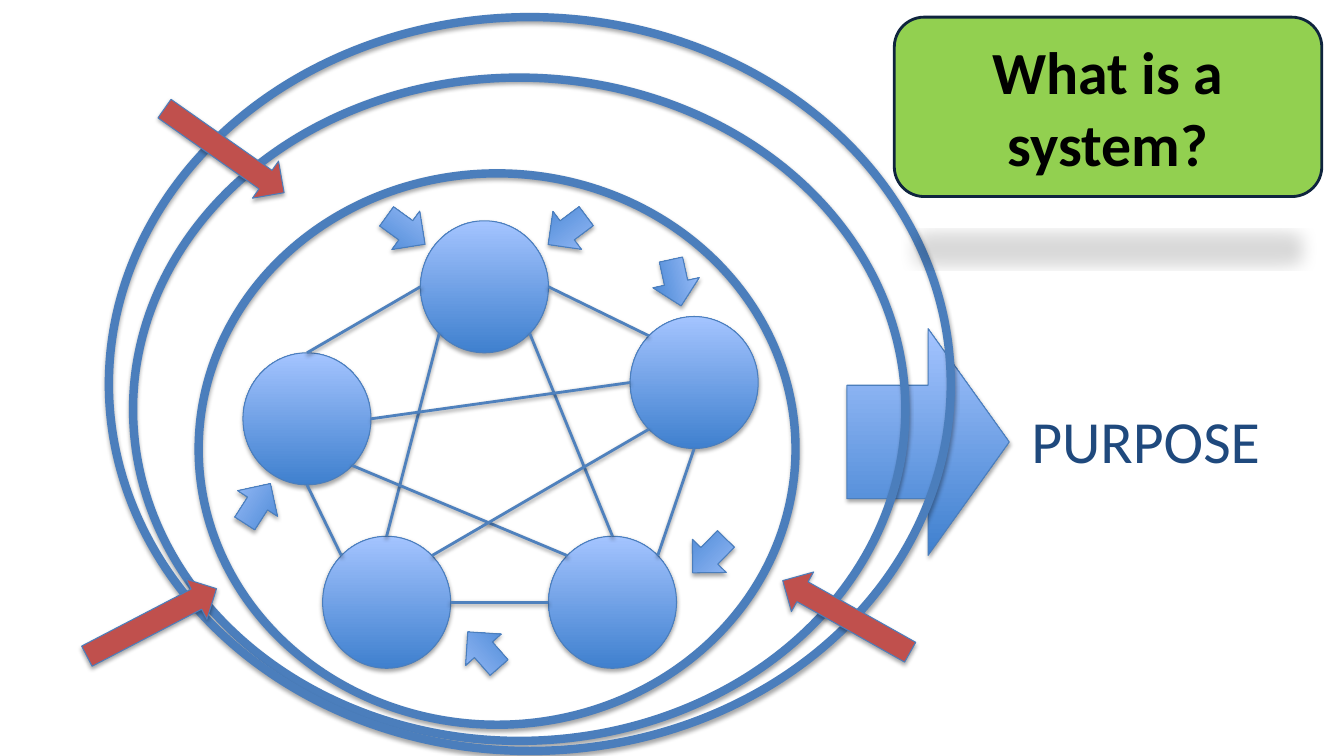
import math

import pptx
import pptx.dml.color
import pptx.enum.shapes
import pptx.enum.text
import pptx.oxml
import pptx.oxml.ns
import pptx.util

PX = 9144  # 100 px to the inch
KIND = pptx.enum.shapes.MSO_SHAPE

THEME = {
    "blend": ("3F80CE", "A4C4FF"),
    "outline": "4B7EBC",
    "link": "4F81BD",
    "force": "C0504D",
    "title_fill": "92D050",
    "title_line": "0F243E",
    "title_text": "000000",
    "purpose_text": "1F497D",
    "font": "Calibri",
    "size": 42.7,
}
SHAPE_SHADOW = {"blurRad": 39370, "dist": 22860, "alpha": 35000}
LINK_SHADOW = {"blurRad": 39370, "dist": 20320, "alpha": 38000}
TITLE_SHADOW = {"blurRad": 152400, "dist": 317500, "alpha": 15000,
                "sx": 90000, "sy": -19000}

NODE_SIZE = (127, 131)
NODES = {
    "left": (241, 350),
    "top": (417, 219),
    "lower left": (320, 532),
    "lower right": (544, 532),
    "right": (625, 314),
}
# Each end is a node and the angle on its rim, clockwise from the right
LINKS = [
    ("top", 0, "right", 225),
    ("right", 90, "lower right", 315),
    ("lower right", 180, "lower left", 0),
    ("left", 270, "top", 180),
    ("lower left", 225, "left", 90),
    ("lower left", 270, "top", 135),
    ("top", 45, "lower right", 270),
    ("lower right", 225, "left", 45),
    ("left", 0, "right", 180),
    ("lower left", 315, "right", 135),
]
# Left, top, rotation
INNER_ARROWS = [(379, 205, 35.9), (680, 528, 134.4), (232, 476, 302.7),
                (456, 621, 228.7), (647, 257, 77.6), (539, 205, 143.2)]
OUTER_ARROWS = [(767, 589, 209.3), (78, 595, 332.5), (150, 127, 35.1)]


def rgb(value):
    return pptx.dml.color.RGBColor.from_string(value)


def px(*lengths):
    return [pptx.util.Emu(round(length * PX)) for length in lengths]


def apply(target, values):
    for name, value in values.items():
        setattr(target, name, value)


def cast_shadow(item, shadow):
    """Give a shape or connector an outer shadow straight below it."""
    values = dict(shadow)
    alpha = values.pop("alpha")
    sizes = " ".join(f'{name}="{value}"' for name, value in values.items())
    effect = pptx.oxml.parse_xml(
        f'<a:effectLst {pptx.oxml.ns.nsdecls("a")}>'
        f'<a:outerShdw {sizes} dir="5400000" rotWithShape="0">'
        f'<a:srgbClr val="000000"><a:alpha val="{alpha}"/></a:srgbClr>'
        '</a:outerShdw></a:effectLst>')
    properties = item._element.spPr
    for old in properties.findall(pptx.oxml.ns.qn("a:effectLst")):
        properties.remove(old)
    properties.append(effect)


def add_figure(page, kind, box, fill, line=THEME["outline"], width=0.75,
               rotation=0, shadow=SHAPE_SHADOW):
    """Fill is one colour, a pair blended from bottom to top, or None."""
    figure = page.shapes.add_shape(kind, *px(*box))
    figure.rotation = rotation
    if fill is None:
        figure.fill.background()
    elif isinstance(fill, tuple):
        figure.fill.gradient()
        figure.fill.gradient_angle = 90
        for stop, colour in zip(figure.fill.gradient_stops, fill):
            stop.color.rgb = rgb(colour)
    else:
        figure.fill.solid()
        figure.fill.fore_color.rgb = rgb(fill)
    figure.line.color.rgb = rgb(line)
    figure.line.width = pptx.util.Pt(width)
    figure.shadow.inherit = False
    cast_shadow(figure, shadow)
    return figure


def write(shape, text, colour, bold, frame_format, para_format):
    frame = shape.text_frame
    apply(frame, {"word_wrap": True, **frame_format})
    para = frame.paragraphs[0]
    apply(para, para_format)
    span = para.add_run()
    span.text = text
    apply(span.font, {"name": THEME["font"], "bold": bold,
                      "size": pptx.util.Pt(THEME["size"])})
    span.font.color.rgb = rgb(colour)


def rim_point(node, degrees):
    left, top = NODES[node]
    width, height = NODE_SIZE
    angle = math.radians(degrees)
    return (left + width / 2 * (1 + math.cos(angle)),
            top + height / 2 * (1 + math.sin(angle)))


def draw_network(page):
    for corner in NODES.values():
        add_figure(page, KIND.OVAL, (*corner, *NODE_SIZE), THEME["blend"])
    for start, start_angle, end, end_angle in LINKS:
        link = page.shapes.add_connector(
            pptx.enum.shapes.MSO_CONNECTOR.STRAIGHT,
            *px(*rim_point(start, start_angle), *rim_point(end, end_angle)))
        link.line.color.rgb = rgb(THEME["link"])
        link.line.width = pptx.util.Pt(2)
        cast_shadow(link, LINK_SHADOW)


def draw_ring(page, box):
    add_figure(page, KIND.OVAL, box, None, width=6)


def draw_purpose(page, box):
    left, top, width, height = box
    add_figure(page, KIND.RIGHT_ARROW, (left, top, 161, height), THEME["blend"])
    label = page.shapes.add_textbox(*px(left + 173, top + 70, width - 173, 82))
    write(label, "PURPOSE", THEME["purpose_text"], False,
          {"auto_size": pptx.enum.text.MSO_AUTO_SIZE.SHAPE_TO_FIT_TEXT}, {})


def draw_arrows(page, arrows, size, fill):
    for left, top, rotation in arrows:
        add_figure(page, KIND.RIGHT_ARROW, (left, top, *size), fill,
                   rotation=rotation)


def draw_title(page, box):
    title = add_figure(page, KIND.ROUNDED_RECTANGLE, box, THEME["title_fill"],
                       line=THEME["title_line"], width=2, shadow=TITLE_SHADOW)
    write(title, "What is a system?", THEME["title_text"], True,
          {"vertical_anchor": pptx.enum.text.MSO_ANCHOR.MIDDLE},
          {"alignment": pptx.enum.text.PP_ALIGN.CENTER})


def main():
    deck = pptx.Presentation()
    deck.slide_width, deck.slide_height = px(1333, 750)
    page = deck.slides.add_slide(deck.slide_layouts[6])

    # The system: parts, links and boundary
    draw_network(page)
    draw_ring(page, (197, 172, 592, 547))
    # What it is for
    draw_purpose(page, (840, 326, 475, 225))
    # Forces within, and the wider surroundings
    draw_arrows(page, INNER_ARROWS, (47, 47), THEME["blend"])
    draw_ring(page, (132, 77, 766, 658))
    draw_ring(page, (108, 17, 835, 728))
    # Title, then forces from outside
    draw_title(page, (887, 17, 424, 178))
    draw_arrows(page, OUTER_ARROWS, (145, 45), THEME["force"])

    deck.save("out.pptx")


if __name__ == "__main__":
    main()
